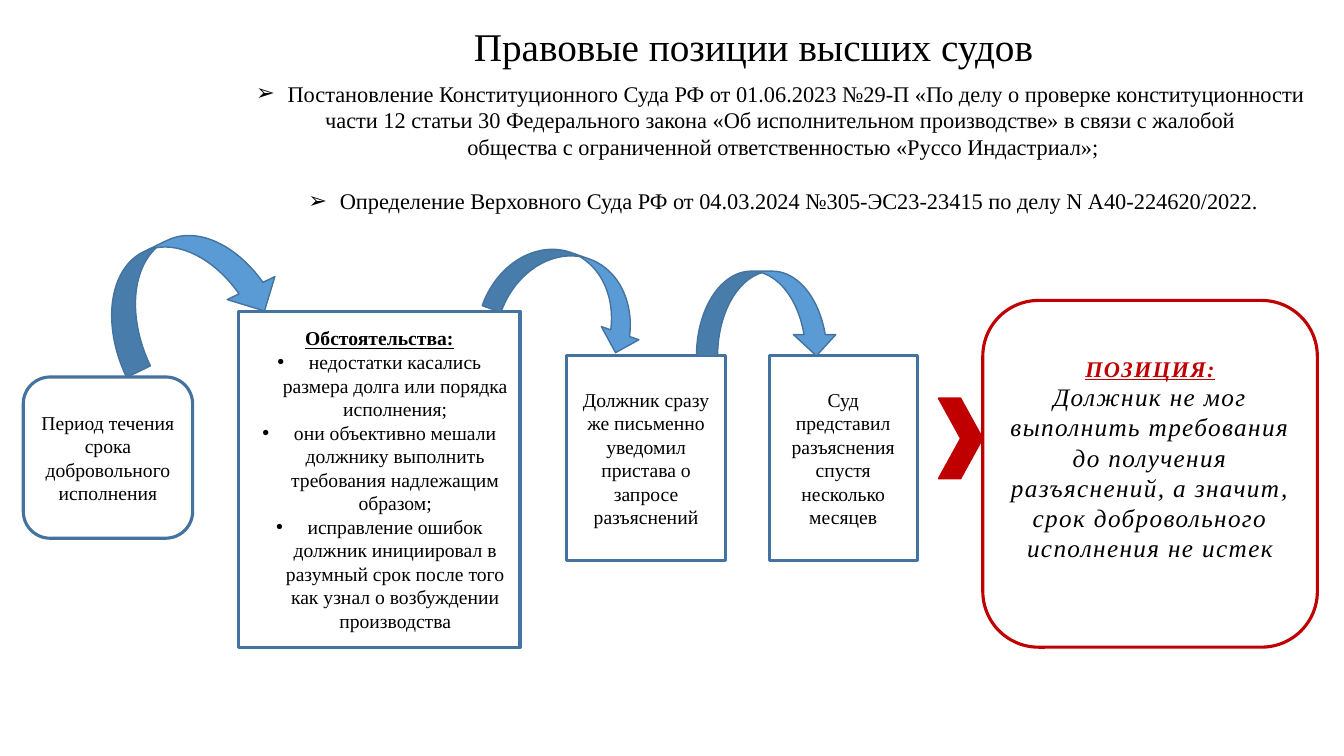
from lxml.etree import SubElement
from pptx import Presentation
from pptx.dml.color import RGBColor
from pptx.enum.shapes import MSO_SHAPE as Preset
from pptx.enum.text import MSO_ANCHOR as Anchor, MSO_AUTO_SIZE as AutoSize, PP_ALIGN as Align
from pptx.oxml.ns import qn
from pptx.util import Pt

FONT = "Times New Roman"
COLORS = {"text": "000000", "outline": "43739E", "arrow": "5B9BD5", "accent": "C00000"}
INDENT = 22.5

TITLE = {"frame": (329, 12.2, 418.3, 41), "text": "Правовые позиции высших судов"}
RULINGS_FRAME = (170.6, 53.3, 777.6, 104.4)
RULINGS = [
    {"text": "Постановление Конституционного Суда РФ от 01.06.2023 №29-П "
             "«По делу о проверке конституционности ", "bullet": "➢"},
    {"text": "части 12 статьи 30 Федерального закона «Об исполнительном производстве» "
             "в связи с жалобой "},
    {"text": "общества с ограниченной ответственностью «Руссо Индастриал»;"},
    {"text": "Определение Верховного Суда РФ от 04.03.2024 №305-ЭС23-23415 "
             "по делу N А40-224620/2022.", "bullet": "➢", "before": 19.2},
]

STEPS = [
    (Preset.RECTANGLE, (170.6, 222.5, 200.9, 239.8), "outline", 3.6, [
        {"text": "Обстоятельства:", "bold": True, "underline": True},
        {"text": "недостатки касались размера долга или порядка исполнения;", "bullet": "•"},
        {"text": "они объективно мешали должнику выполнить требования надлежащим образом;",
         "bullet": "•"},
        {"text": "исправление ошибок должник инициировал в разумный срок после того "
                 "как узнал о возбуждении производства", "bullet": "•"},
    ]),
    (Preset.ROUNDED_RECTANGLE, (16.6, 269.3, 121, 115.2), "outline", 3.6, [
        {"text": "Период течения срока добровольного исполнения"}]),
    (Preset.RECTANGLE, (404.6, 254.2, 113.8, 146.2), "outline", 3.6, [
        {"text": "Должник сразу же письменно уведомил пристава о запросе разъяснений"}]),
    (Preset.RECTANGLE, (549.4, 254.2, 105.8, 146.2), "outline", 3.6, [
        {"text": "Суд представил разъяснения спустя несколько месяцев"}]),
    (Preset.ROUNDED_RECTANGLE, (702, 214.6, 239, 247.7), "accent", 25, [
        {"text": "ПОЗИЦИЯ:", "size": 16, "color": "accent", "bold": True,
         "underline": True, "italic": True, "spacing": 100},
        {"text": "Должник не мог выполнить требования до получения разъяснений, "
                 "а значит, срок добровольного исполнения не истек",
         "size": 18, "italic": True, "spacing": 100},
    ]),
]

ARROWS = [
    (Preset.CURVED_DOWN_ARROW, (67.7, 169.9, 128.2, 75.6), 334.3, "arrow", "outline"),
    (Preset.CURVED_DOWN_ARROW, (350.6, 182.2, 115.2, 56.9), 19.4, "arrow", "outline"),
    (Preset.CURVED_DOWN_ARROW, (497.5, 193.7, 100.8, 60.5), 0, "arrow", "outline"),
    (Preset.CHEVRON, (670.3, 284.4, 31.7, 57.6), 0, "accent", "accent"),
]


def color(name):
    return RGBColor.from_string(COLORS[name])


def place(shape, frame):
    shape.left, shape.top, shape.width, shape.height = map(Pt, frame)


def write(text_frame, items, size):
    for number, item in enumerate(items):
        paragraph = text_frame.paragraphs[0] if number == 0 else text_frame.add_paragraph()
        properties = paragraph._p.get_or_add_pPr()
        bullet = item.get("bullet")
        indent = Pt(INDENT) if bullet else 0
        properties.set("marL", str(indent))
        properties.set("indent", str(-indent))
        if bullet:
            SubElement(properties, qn("a:buFont"), typeface="Arial")
            SubElement(properties, qn("a:buChar"), char=bullet)
        else:
            SubElement(properties, qn("a:buNone"))
        paragraph.alignment = Align.CENTER
        paragraph.line_spacing = 1.0
        paragraph.space_before = Pt(item.get("before", 0))
        paragraph.space_after = Pt(0)
        run = paragraph.add_run()
        run.text = item["text"]
        font = run.font
        font.name = FONT
        font.size = Pt(item.get("size", size))
        font.color.rgb = color(item.get("color", "text"))
        font.bold = item.get("bold", False)
        font.italic = item.get("italic", False)
        font.underline = item.get("underline", False)
        if "spacing" in item:
            run._r.get_or_add_rPr().set("spc", str(item["spacing"]))


def fill_placeholder(shape, frame, items, size):
    place(shape, frame)
    text_frame = shape.text_frame
    text_frame.word_wrap = False
    text_frame.auto_size = AutoSize.NONE
    text_frame.vertical_anchor = Anchor.TOP
    write(text_frame, items, size)


def add_preset(slide, preset, frame, line, width):
    shape = slide.shapes.add_shape(preset, *map(Pt, frame))
    shape.shadow.inherit = False
    shape.line.color.rgb = color(line)
    shape.line.width = Pt(width)
    return shape


def add_step(slide, preset, frame, line, bottom, items):
    shape = add_preset(slide, preset, frame, line, 2.25)
    shape.fill.background()
    text_frame = shape.text_frame
    text_frame.word_wrap = True
    text_frame.vertical_anchor = Anchor.MIDDLE
    text_frame.margin_bottom = Pt(bottom)
    write(text_frame, items, 14)


def add_arrow(slide, preset, frame, rotation, fill, line):
    shape = add_preset(slide, preset, frame, line, 1)
    shape.fill.solid()
    shape.fill.fore_color.rgb = color(fill)
    shape.rotation = rotation


def main():
    presentation = Presentation()
    presentation.slide_width, presentation.slide_height = Pt(960), Pt(540)
    slide = presentation.slides.add_slide(presentation.slide_layouts[1])
    fill_placeholder(slide.shapes.title, TITLE["frame"], [TITLE], 28)
    fill_placeholder(slide.placeholders[1], RULINGS_FRAME, RULINGS, 16)
    for step in STEPS:
        add_step(slide, *step)
    for arrow in ARROWS:
        add_arrow(slide, *arrow)
    presentation.save("out.pptx")


if __name__ == "__main__":
    main()
